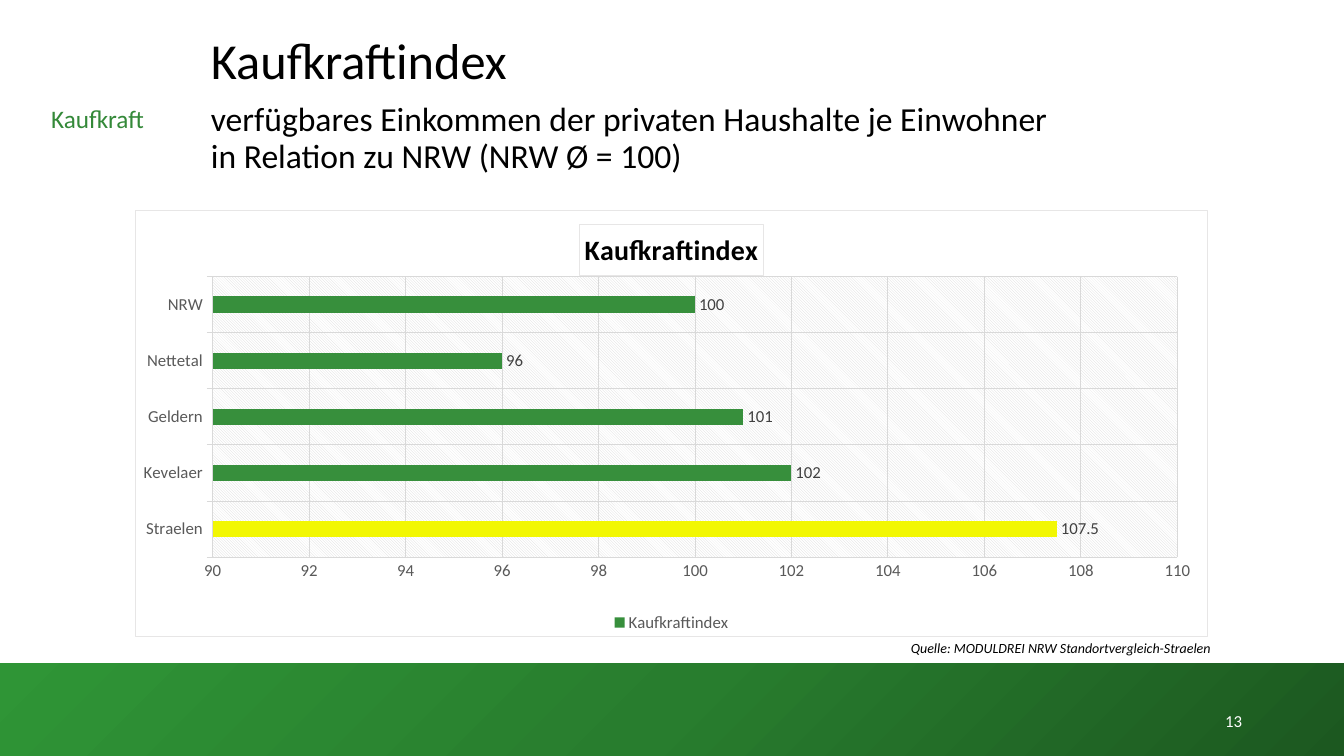
"""Build the Kaufkraftindex slide with its bar chart."""
from copy import deepcopy

from lxml.etree import fromstring
from pptx import Presentation
from pptx.chart.data import CategoryChartData
from pptx.dml.color import RGBColor
from pptx.enum.chart import XL_CHART_TYPE, XL_LABEL_POSITION, XL_LEGEND_POSITION, XL_TICK_MARK
from pptx.enum.shapes import MSO_SHAPE
from pptx.enum.text import MSO_ANCHOR, PP_ALIGN
from pptx.oxml.ns import nsdecls, qn
from pptx.util import Emu, Pt

THEME = {
    "font": "Calibri",
    "black": "000000", "white": "FFFFFF", "label": "404040", "axis": "595959",
    "grid": "D9D9D9", "border": "E7E6E6", "bar": "378F3C", "highlight": "F2F703",
    "section": "348939", "footer": ("1C5820", "287D2E", "2F9536"),
    "title": 36, "subtitle": 24, "chart_title": 20, "section_size": 18,
    "chart_text": 12, "source": 10,
}
PX = 914400 / 100.8


def lengths(*pixels):
    return [Emu(round(pixel * PX)) for pixel in pixels]


def style(font, size, color, **values):
    values.update(name=THEME["font"], size=Pt(THEME[size]))
    for name, value in values.items():
        setattr(font, name, value)
    font.color.rgb = RGBColor.from_string(THEME[color])


deck = Presentation()
deck.slide_width, deck.slide_height = lengths(1344, 756)
page = deck.slides.add_slide(deck.slide_layouts[6])

footer = page.shapes.add_shape(MSO_SHAPE.RECTANGLE, *lengths(0, 663, 1344, 93))
footer.shadow.inherit = False
footer.line.fill.background()
footer.fill.gradient()
footer.fill.gradient_angle = 135
stop_list = footer._element.spPr.find(qn("a:gradFill")).find(qn("a:gsLst"))
stop_list.append(deepcopy(stop_list[-1]))
for stop, position, color in zip(footer.fill.gradient_stops, (0, 0.5, 1), THEME["footer"]):
    stop.position = position
    stop.color.rgb = RGBColor.from_string(color)

data = CategoryChartData()
data.categories = ["Straelen", "Kevelaer", "Geldern", "Nettetal", "NRW"]
data.add_series("Kaufkraftindex", (107.5, 102, 101, 96, 100))
chart = page.shapes.add_chart(
    XL_CHART_TYPE.BAR_CLUSTERED, *lengths(135, 210, 1073, 427), data
).chart
style(chart.font, "source", "black")

heading = chart.chart_title
heading.text_frame.text = "Kaufkraftindex"
style(heading.text_frame.paragraphs[0].runs[0].font, "chart_title", "black", bold=True)
heading.format.line.width = Pt(0.75)
heading.format.line.color.rgb = RGBColor.from_string(THEME["border"])

chart.has_legend = True
chart.legend.position = XL_LEGEND_POSITION.BOTTOM
chart.legend.include_in_layout = False
style(chart.legend.font, "chart_text", "axis")

axis_formats = (
    (chart.category_axis, {"major_tick_mark": XL_TICK_MARK.OUTSIDE}),
    (chart.value_axis, {"major_tick_mark": XL_TICK_MARK.NONE, "minimum_scale": 90,
                        "maximum_scale": 110, "major_unit": 2}),
)
for axis, values in axis_formats:
    values.update(has_major_gridlines=True, minor_tick_mark=XL_TICK_MARK.NONE)
    for name, value in values.items():
        setattr(axis, name, value)
    style(axis.tick_labels.font, "chart_text", "axis")
    for line in (axis.format.line, axis.major_gridlines.format.line):
        line.width = Pt(0.75)
        line.color.rgb = RGBColor.from_string(THEME["grid"])
chart.value_axis.format.line.fill.background()

plot = chart.plots[0]
for name, value in {"gap_width": 247, "overlap": -58, "vary_by_categories": False,
                    "has_data_labels": True}.items():
    setattr(plot, name, value)
plot.data_labels.show_value = True
plot.data_labels.position = XL_LABEL_POSITION.OUTSIDE_END
style(plot.data_labels.font, "chart_text", "label")
series = plot.series[0]
for bar, color in ((series, "bar"), (series.points[0], "highlight")):
    bar.format.fill.solid()
    bar.format.fill.fore_color.rgb = RGBColor.from_string(THEME[color])

namespaces = nsdecls("c", "a")
chart_part = chart._chartSpace.find(qn("c:chart"))
plot_area = chart_part.find(qn("c:plotArea"))
for layout in plot_area.findall(qn("c:layout")):
    plot_area.remove(layout)
plot_area.insert(0, fromstring(
    f'<c:layout {namespaces}><c:manualLayout><c:layoutTarget val="inner"/>'
    '<c:xMode val="edge"/><c:yMode val="edge"/><c:x val="0.072"/><c:y val="0.155"/>'
    '<c:w val="0.9"/><c:h val="0.659"/></c:manualLayout></c:layout>'))
plot_area.append(fromstring(
    f'<c:spPr {namespaces}><a:pattFill prst="ltDnDiag">'
    f'<a:fgClr><a:srgbClr val="{THEME["grid"]}"/></a:fgClr>'
    f'<a:bgClr><a:srgbClr val="{THEME["white"]}"/></a:bgClr></a:pattFill></c:spPr>'))
chart_part.addnext(fromstring(
    f'<c:spPr {namespaces}><a:solidFill><a:srgbClr val="{THEME["white"]}"/></a:solidFill>'
    f'<a:ln w="9525"><a:solidFill><a:srgbClr val="{THEME["border"]}"/></a:solidFill></a:ln>'
    '</c:spPr>'))

left, center, right = PP_ALIGN.LEFT, PP_ALIGN.CENTER, PP_ALIGN.RIGHT
top, middle = MSO_ANCHOR.TOP, MSO_ANCHOR.MIDDLE
texts = (
    ((950, 701, 302, 40), ["13"], "chart_text", "white", right, middle, 1.0, False),
    ((36, 98, 123, 40), ["Kaufkraft"], "section_size", "section", center, top, 1.0, False),
    ((901, 635, 350, 27), ["Quelle: MODULDREI NRW Standortvergleich-Straelen"],
     "source", "black", left, top, 1.0, True),
    ((201, 31, 1083, 88), ["Kaufkraftindex"], "title", "black", left, top, 0.9, False),
    ((201, 98, 1083, 88), ["verfügbares Einkommen der privaten Haushalte je Einwohner",
                           "in Relation zu NRW (NRW Ø = 100)"],
     "subtitle", "black", left, top, 0.9, False),
)
for place, rows, size, color, alignment, anchor, spacing, italic in texts:
    box = page.shapes.add_textbox(*lengths(*place)).text_frame
    box.word_wrap = True
    box.vertical_anchor = anchor
    box.text = "\n".join(rows)
    for para in box.paragraphs:
        para.alignment = alignment
        para.line_spacing = spacing
        for span in para.runs:
            style(span.font, size, color, italic=italic)

deck.save("out.pptx")
